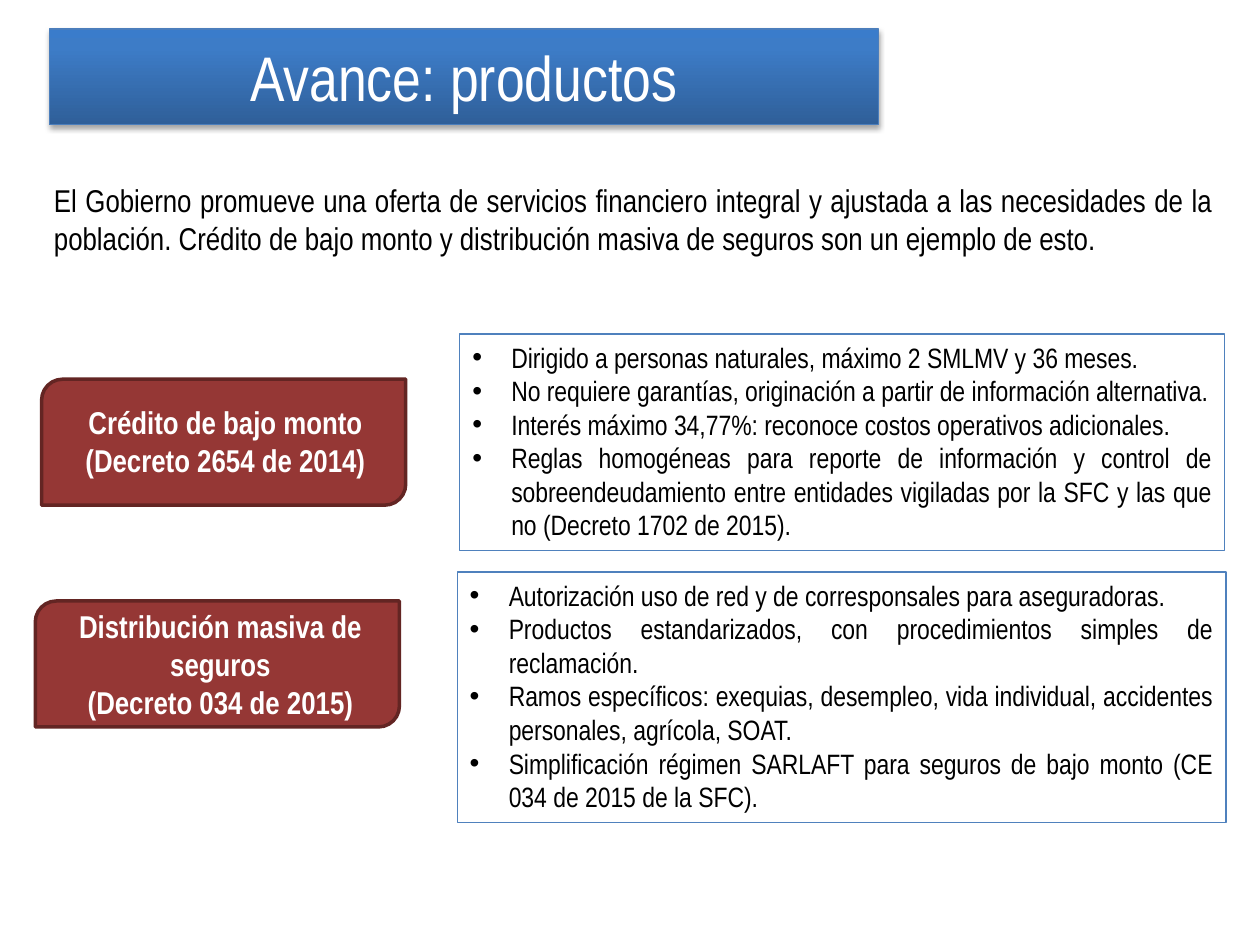
from dataclasses import dataclass

from lxml.etree import SubElement as Sub
from pptx import Presentation
from pptx.dml.color import RGBColor as Rgb
from pptx.enum.shapes import MSO_SHAPE as Kind
from pptx.enum.text import MSO_ANCHOR as Anchor, MSO_AUTO_SIZE as Fit, PP_ALIGN as Align
from pptx.oxml import parse_xml
from pptx.oxml.ns import nsdecls, qn
from pptx.util import Inches, Pt


@dataclass(frozen=True)
class Theme:
    font: str = "Arial Narrow"
    head: int = 36
    body: int = 18
    item: int = 16
    ink: str = "000000"
    light: str = "FFFFFF"
    badge: str = "953735"
    edge: str = "632523"
    frame: str = "4F81BD"
    rim: str = "4B7EBC"
    ramp: tuple = ((0, "2F5F99"), (80, "3D7CC7"), (100, "3A7CCB"))


@dataclass(frozen=True)
class Box:
    left: float
    top: float
    width: float
    height: float

    def place(self) -> list:
        return [Inches(v) for v in (self.left, self.top, self.width, self.height)]


@dataclass(frozen=True)
class Topic:
    badge: Box
    label: Box
    panel: Box
    name: tuple
    items: tuple


LOOK = Theme()
INDENT = Inches(0.31)

TOPICS = (
    Topic(
        Box(0.33, 3.01, 2.89, 1), Box(0.41, 3.15, 2.76, 0.71), Box(3.65, 2.65, 6.07, 1.72),
        ("Crédito de bajo monto (Decreto 2654 de 2014)",),
        (
            "Dirigido a personas naturales, máximo 2 SMLMV y 36 meses.",
            "No requiere garantías, originación a partir de información alternativa.",
            "Interés máximo 34,77%: reconoce costos operativos adicionales.",
            "Reglas homogéneas para reporte de información y control de "
            "sobreendeudamiento entre entidades vigiladas por la SFC y las que no "
            "(Decreto 1702 de 2015).",
        ),
    ),
    Topic(
        Box(0.28, 4.77, 2.89, 1), Box(0.41, 4.77, 2.68, 1.01), Box(3.63, 4.54, 6.1, 1.99),
        ("Distribución masiva de seguros", "(Decreto 034 de 2015)"),
        (
            "Autorización uso de red y de corresponsales para aseguradoras.",
            "Productos estandarizados, con procedimientos simples de reclamación.",
            "Ramos específicos: exequias, desempleo, vida individual, accidentes "
            "personales, agrícola, SOAT.",
            "Simplificación régimen SARLAFT para seguros de bajo monto "
            "(CE 034 de 2015 de la SFC).",
        ),
    ),
)


def write(shape, lines: tuple, size: int, color: str, align: Align,
          bold: bool = False, bullet: bool = False) -> None:
    frame = shape.text_frame
    frame.word_wrap = True
    for num, line in enumerate(lines):
        para = frame.add_paragraph() if num else frame.paragraphs[0]
        para.text = line
        para.alignment = align
        if bullet:
            props = para._p.get_or_add_pPr()
            props.set("marL", str(INDENT))
            props.set("indent", str(-INDENT))
            Sub(props, qn("a:buFont"), typeface="Arial")
            Sub(props, qn("a:buChar"), char="•")
        font = para.font
        font.name, font.size, font.bold = LOOK.font, Pt(size), bold
        font.color.rgb = Rgb.from_string(color)


def shape(slide, kind: Kind, box: Box, line: str, weight: float, fill: str = ""):
    item = slide.shapes.add_shape(kind, *box.place())
    item.shadow.inherit = False
    if fill:
        item.fill.solid()
        item.fill.fore_color.rgb = Rgb.from_string(fill)
    else:
        item.fill.background()
    item.line.color.rgb = Rgb.from_string(line)
    item.line.width = Pt(weight)
    return item


def label(slide, box: Box, lines: tuple, color: str, align: Align, bold: bool = False) -> None:
    item = slide.shapes.add_textbox(*box.place())
    write(item, lines, LOOK.body, color, align, bold)
    item.text_frame.auto_size = Fit.SHAPE_TO_FIT_TEXT


def banner(slide, box: Box, text: str) -> None:
    item = shape(slide, Kind.RECTANGLE, box, LOOK.rim, 0.75)
    props = item._element.spPr
    # Gradient running upwards
    stops = "".join(f'<a:gs pos="{pos * 1000}"><a:srgbClr val="{color}"/></a:gs>'
                    for pos, color in LOOK.ramp)
    props.replace(props.find(qn("a:noFill")), parse_xml(
        f'<a:gradFill rotWithShape="1" {nsdecls("a")}><a:gsLst>{stops}</a:gsLst>'
        '<a:lin ang="16200000" scaled="0"/></a:gradFill>'))
    # Soft shadow below
    cast = Sub(props.find(qn("a:effectLst")), qn("a:outerShdw"), blurRad=str(Pt(3.1)),
               dist=str(Pt(1.8)), dir="5400000", rotWithShape="0")
    Sub(Sub(cast, qn("a:srgbClr"), val=LOOK.ink), qn("a:alpha"), val="35000")
    write(item, (text,), LOOK.head, LOOK.light, Align.CENTER)
    item.text_frame.vertical_anchor = Anchor.MIDDLE


def topic(slide, data: Topic) -> None:
    shape(slide, Kind.ROUND_2_DIAG_RECTANGLE, data.badge, LOOK.edge, 2, LOOK.badge)
    label(slide, data.label, data.name, LOOK.light, Align.CENTER, bold=True)
    panel = shape(slide, Kind.RECTANGLE, data.panel, LOOK.frame, 0.75)
    write(panel, data.items, LOOK.item, LOOK.ink, Align.JUSTIFY, bullet=True)
    panel.text_frame.vertical_anchor = Anchor.TOP
    panel.text_frame.auto_size = Fit.SHAPE_TO_FIT_TEXT


def main() -> None:
    deck = Presentation()
    deck.slide_width, deck.slide_height = Inches(10), Inches(7.5)
    slide = deck.slides.add_slide(deck.slide_layouts[6])

    # Title and introduction
    banner(slide, Box(0.39, 0.23, 6.58, 0.76), "Avance: productos")
    label(slide, Box(0.33, 1.39, 9.4, 0.71), (
        "El Gobierno promueve una oferta de servicios financiero integral y ajustada a las "
        "necesidades de la población. Crédito de bajo monto y distribución masiva de seguros "
        "son un ejemplo de esto.",), LOOK.ink, Align.JUSTIFY)

    # Products with their details
    for data in TOPICS:
        topic(slide, data)

    deck.save("out.pptx")


if __name__ == "__main__":
    main()
